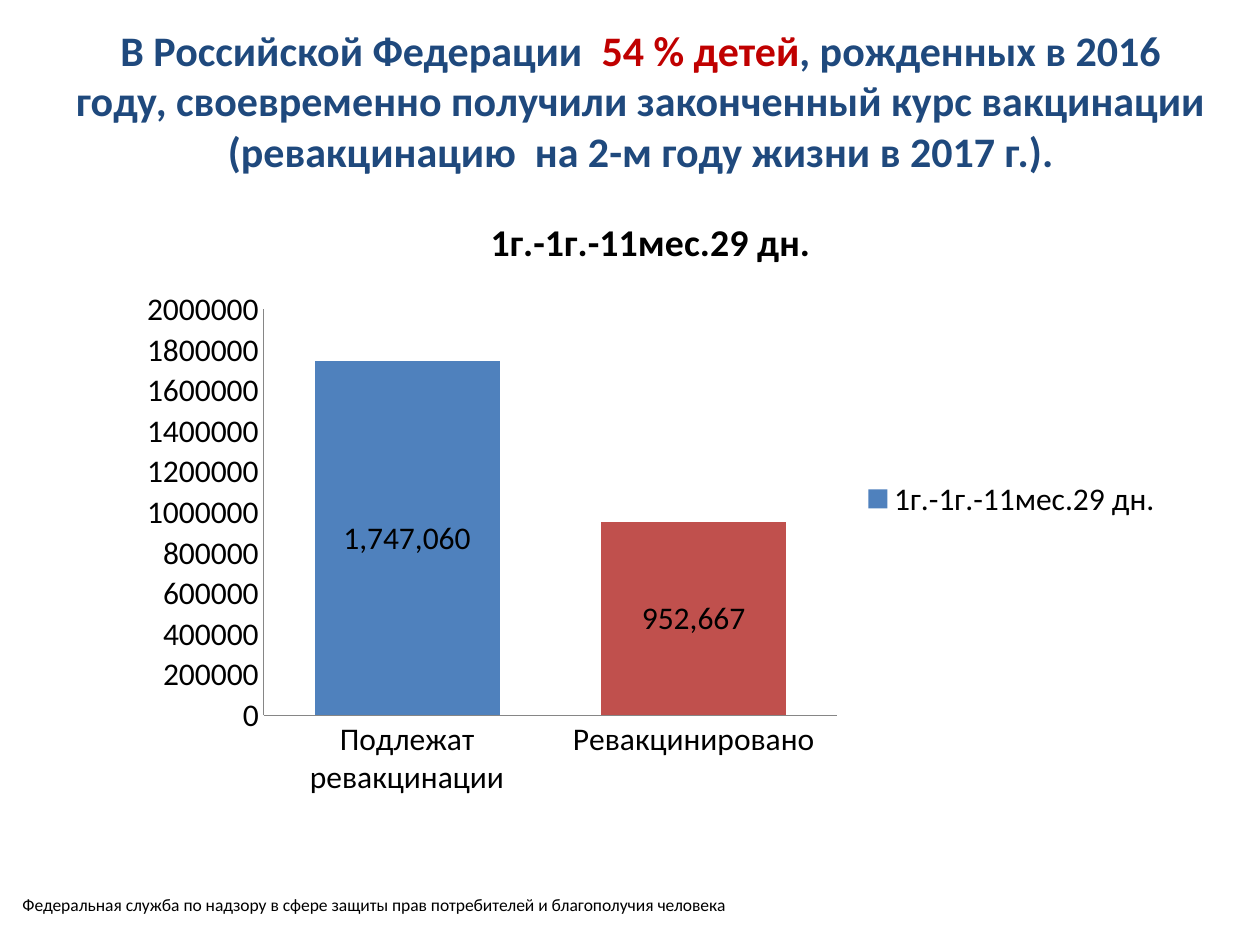
import dataclasses

import pptx
import pptx.chart.data
import pptx.dml.color
import pptx.enum.chart
import pptx.enum.text
import pptx.util


@dataclasses.dataclass(frozen=True)
class Theme:
    font: str = "Calibri"
    ink: str = "000000"
    heading: str = "1F497D"
    accent: str = "C00000"
    axis: str = "868686"
    bars: tuple = ("4F81BD", "C0504D")
    heading_size: float = 24
    chart_title_size: float = 21.6
    chart_size: float = 18
    footer_size: float = 10


def rgb(value):
    return pptx.dml.color.RGBColor.from_string(value)


def format_font(font, name, size, color, bold=False):
    font.name = name
    font.size = pptx.util.Pt(size)
    font.bold = bold
    font.color.rgb = rgb(color)


def add_run(paragraph, text, **style):
    run = paragraph.add_run()
    run.text = text
    format_font(run.font, **style)


class SlideBuilder:
    def __init__(self, presentation, theme):
        self.presentation = presentation
        self.theme = theme
        self.slide = presentation.slides.add_slide(presentation.slide_layouts[5])

    def box(self, left, top, width, height):
        across = self.presentation.slide_width
        down = self.presentation.slide_height
        return [round(share * length) for share, length in
                zip((left, top, width, height), (across, down, across, down))]

    def title(self, parts, *shares):
        shape = self.slide.shapes.title
        shape.left, shape.top, shape.width, shape.height = self.box(*shares)
        frame = shape.text_frame
        frame.word_wrap = True
        frame.vertical_anchor = pptx.enum.text.MSO_ANCHOR.MIDDLE
        paragraph = frame.paragraphs[0]
        paragraph.alignment = pptx.enum.text.PP_ALIGN.CENTER
        for text, color in parts:
            add_run(paragraph, text, name=self.theme.font,
                    size=self.theme.heading_size, color=color, bold=True)

    def text(self, text, *shares):
        frame = self.slide.shapes.add_textbox(*self.box(*shares)).text_frame
        frame.word_wrap = True
        frame.auto_size = pptx.enum.text.MSO_AUTO_SIZE.SHAPE_TO_FIT_TEXT
        add_run(frame.paragraphs[0], text, name=self.theme.font,
                size=self.theme.footer_size, color=self.theme.ink)

    def column_chart(self, name, values, *shares):
        theme = self.theme
        data = pptx.chart.data.CategoryChartData()
        data.categories = list(values)
        data.add_series(name, list(values.values()))
        chart = self.slide.shapes.add_chart(
            pptx.enum.chart.XL_CHART_TYPE.COLUMN_STACKED, *self.box(*shares), data).chart
        format_font(chart.font, theme.font, theme.chart_size, theme.ink)

        chart.has_title = True
        add_run(chart.chart_title.text_frame.paragraphs[0], name, name=theme.font,
                size=theme.chart_title_size, color=theme.ink, bold=True)
        chart.has_legend = True
        chart.legend.position = pptx.enum.chart.XL_LEGEND_POSITION.RIGHT
        chart.legend.include_in_layout = False

        for axis in (chart.category_axis, chart.value_axis):
            axis.has_major_gridlines = False
            axis.major_tick_mark = pptx.enum.chart.XL_TICK_MARK.NONE
            axis.minor_tick_mark = pptx.enum.chart.XL_TICK_MARK.NONE
            axis.format.line.color.rgb = rgb(theme.axis)
            axis.format.line.width = pptx.util.Pt(0.75)
        chart.value_axis.minimum_scale = 0
        chart.value_axis.tick_labels.number_format = "General"
        chart.value_axis.tick_labels.number_format_is_linked = False

        plot = chart.plots[0]
        plot.gap_width = 55
        plot.overlap = 100
        plot.vary_by_categories = False
        series = plot.series[0]
        series.format.fill.solid()
        series.format.fill.fore_color.rgb = rgb(theme.bars[0])
        second_fill = series.points[1].format.fill
        second_fill.solid()
        second_fill.fore_color.rgb = rgb(theme.bars[1])
        labels = series.data_labels
        labels.show_value = True
        labels.number_format = "#,##0"
        labels.number_format_is_linked = False
        labels.position = pptx.enum.chart.XL_LABEL_POSITION.CENTER
        format_font(labels.font, theme.font, theme.chart_size, theme.ink)


def main():
    presentation = pptx.Presentation()
    presentation.slide_width = pptx.util.Inches(10)
    presentation.slide_height = pptx.util.Inches(7.5)
    theme = Theme()
    builder = SlideBuilder(presentation, theme)
    builder.title([
        ("В Российской Федерации  ", theme.heading),
        ("54 % детей", theme.accent),
        (", рожденных в 2016 году, своевременно получили законченный курс вакцинации "
         "(ревакцинацию  на 2-м году жизни в 2017 г.).", theme.heading),
    ], 0.05, 0.17 / 7.5, 0.917, 1 / 6)
    builder.column_chart(
        "1г.-1г.-11мес.29 дн.",
        {"Подлежат ревакцинации": 1747060, "Ревакцинировано": 952667},
        0.1, 0.2, 0.833, 4.92 / 7.5)
    builder.text("Федеральная служба по надзору в сфере защиты прав потребителей "
                 "и благополучия человека", 0.008, 0.94, 0.6, 0.036)
    presentation.save("out.pptx")


if __name__ == "__main__":
    main()
